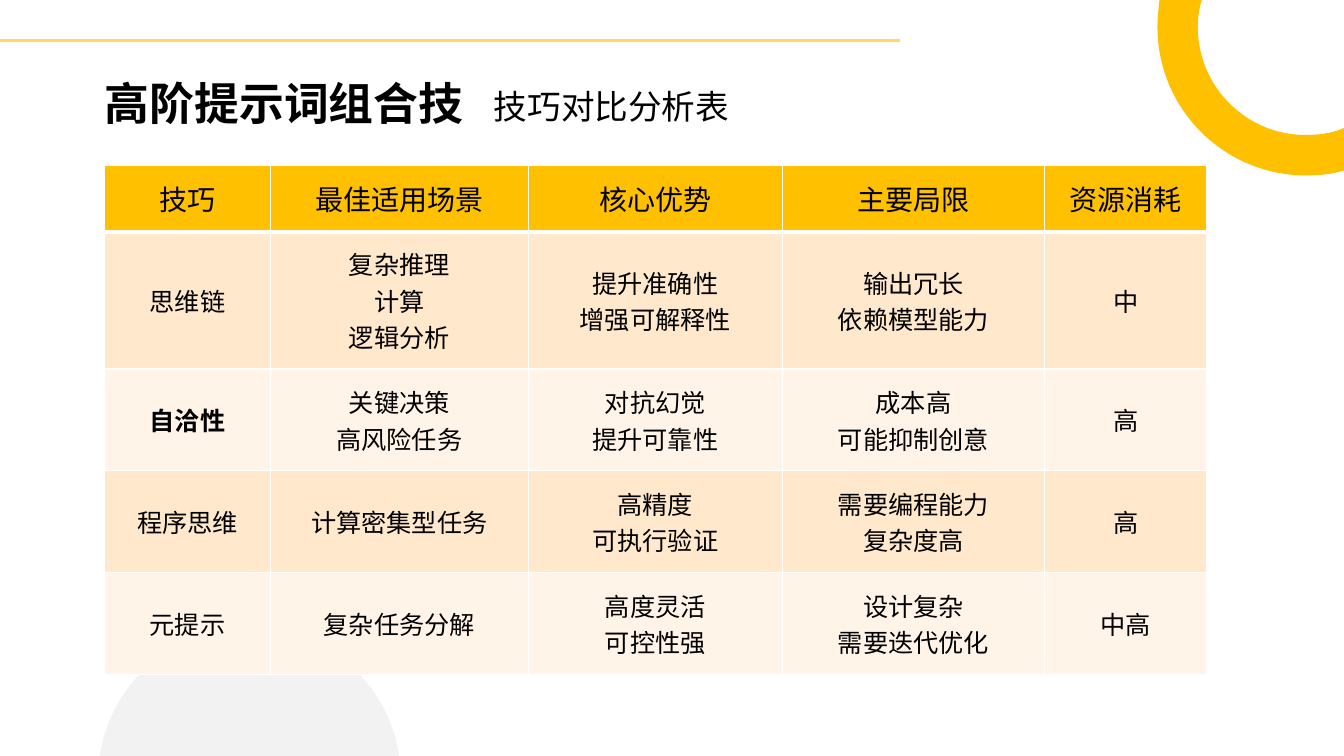
from lxml import etree
from pptx import Presentation
from pptx.dml.color import RGBColor
from pptx.enum.shapes import MSO_CONNECTOR
from pptx.enum.text import MSO_ANCHOR, PP_ALIGN
from pptx.oxml.ns import qn
from pptx.util import Inches, Pt

STRAIGHT = MSO_CONNECTOR.STRAIGHT
MIDDLE = MSO_ANCHOR.MIDDLE
CENTER = PP_ALIGN.CENTER
FONT = "Arial"
BLACK = RGBColor(0x00, 0x00, 0x00)
WHITE = RGBColor(0xFF, 0xFF, 0xFF)
AMBER = RGBColor(0xFF, 0xC0, 0x00)
PALE_AMBER = RGBColor(0xFF, 0xD9, 0x66)
BANDS = RGBColor(0xFF, 0xE8, 0xCC), RGBColor(0xFF, 0xF4, 0xE7)

SLIDE_W, SLIDE_H = 13.33, 7.5
TITLE = "高阶提示词组合技"
SUBTITLE = "技巧对比分析表"
HEADER = ["技巧", "最佳适用场景", "核心优势", "主要局限", "资源消耗"]
TECHNIQUES = [
    ["思维链", "复杂推理\n计算\n逻辑分析", "提升准确性\n增强可解释性", "输出冗长\n依赖模型能力", "中"],
    ["自洽性", "关键决策\n高风险任务", "对抗幻觉\n提升可靠性", "成本高\n可能抑制创意", "高"],
    ["程序思维", "计算密集型任务", "高精度\n可执行验证", "需要编程能力\n复杂度高", "高"],
    ["元提示", "复杂任务分解", "高度灵活\n可控性强", "设计复杂\n需要迭代优化", "中高"],
]
EMPHASIZED = "自洽性"
COLUMN_WIDTHS = [1.64, 2.56, 2.52, 2.6, 1.61]
ROW_HEIGHTS = [0.66, 1.36, 1.01, 1.01, 1.01]
LEFT, TABLE_TOP = 1.04, 1.64
CELL_MARGINS = {"margin_left": 0.18, "margin_right": 0.18,
                "margin_top": 0.08, "margin_bottom": 0.08}

# Each outline is a list of segments: one point is a line, three are a curve.
RING = [
    [(11.92, 0)],
    [(11.89, 0.09), (11.88, 0.18), (11.88, 0.27)],
    [(11.88, 0.86), (12.36, 1.34), (12.95, 1.34)],
    [(13.09, 1.34), (13.22, 1.32), (SLIDE_W, 1.27)],
    [(SLIDE_W, 1.69)],
    [(13.21, 1.73), (13.08, 1.74), (12.95, 1.74)],
    [(12.14, 1.74), (11.48, 1.08), (11.48, 0.27)],
    [(11.48, 0.18), (11.49, 0.09), (11.5, 0)],
]
DISC = [
    [(3.96, SLIDE_H)],
    [(0.99, SLIDE_H)],
    [(1.1, 6.77), (1.72, 6.22), (2.47, 6.22)],
    [(3.23, 6.22), (3.85, 6.77), (3.96, SLIDE_H)],
]


def style(paragraph, size, bold=False):
    for key, value in {"name": FONT, "size": Pt(size), "bold": bold}.items():
        setattr(paragraph.font, key, value)
    paragraph.font.color.rgb = BLACK


def add_outline(slide, segments, color):
    """Draw the segments as one closed shape, turning point triples into curves."""
    points = [(Inches(x), Inches(y)) for segment in segments for x, y in segment]
    builder = slide.shapes.build_freeform(*points[0], scale=1.0)
    builder.add_line_segments(points[1:], close=True)
    shape = builder.convert_to_shape()
    lines = iter(list(shape._element.iter(qn("a:lnTo"))))
    for segment in segments[1:]:
        steps = [next(lines) for _ in segment]
        if len(steps) == 3:
            curve = etree.Element(qn("a:cubicBezTo"))
            steps[0].addprevious(curve)
            for step in steps:
                curve.append(step[0])
                step.getparent().remove(step)
    shape.shadow.inherit = False
    shape.fill.solid()
    shape.fill.fore_color.rgb = color
    shape.line.fill.background()
    return shape


def add_decoration(slide):
    add_outline(slide, RING, AMBER)
    disc = add_outline(slide, DISC, BLACK)
    disc_color = disc._element.spPr.find(qn("a:solidFill"))[0]
    etree.SubElement(disc_color, qn("a:alpha"), val="5000")


def add_rule(slide):
    rule = slide.shapes.add_connector(
        STRAIGHT, 0, Inches(0.4), Inches(8.93), Inches(0.4))
    rule.line.color.rgb = PALE_AMBER
    rule.line.width = Pt(2.25)
    etree.SubElement(rule._element.spPr, qn("a:effectLst"))


def add_heading(slide, text, box, size, bold, margins, spacing=None):
    frame = slide.shapes.add_textbox(*map(Inches, box)).text_frame
    frame.word_wrap = True
    for side, margin in zip(("left", "top", "right", "bottom"), margins):
        setattr(frame, f"margin_{side}", Inches(margin))
    frame.text = text
    frame.paragraphs[0].line_spacing = spacing
    style(frame.paragraphs[0], size, bold)


def set_borders(cell, widths):
    properties = cell._tc.get_or_add_tcPr()
    for side, width in widths.items():
        line = etree.SubElement(properties, qn(f"a:ln{side}"), w=str(Pt(width)))
        fill = etree.SubElement(line, qn("a:solidFill"))
        etree.SubElement(fill, qn("a:srgbClr"), val=str(WHITE))


def add_comparison(slide):
    rows = [HEADER] + TECHNIQUES
    table = slide.shapes.add_table(
        len(rows), len(HEADER), Inches(LEFT), Inches(TABLE_TOP),
        Inches(sum(COLUMN_WIDTHS)), Inches(sum(ROW_HEIGHTS))).table
    for column, width in zip(table.columns, COLUMN_WIDTHS):
        column.width = Inches(width)
    for r, texts in enumerate(rows):
        table.rows[r].height = Inches(ROW_HEIGHTS[r])
        borders = {"L": 1, "R": 1, "T": 3 if r == 1 else 1, "B": 3 if r == 0 else 1}
        for c, text in enumerate(texts):
            cell = table.cell(r, c)
            set_borders(cell, borders)
            cell.fill.solid()
            cell.fill.fore_color.rgb = BANDS[(r - 1) % 2] if r else AMBER
            cell.vertical_anchor = MIDDLE
            for key, margin in CELL_MARGINS.items():
                setattr(cell, key, Inches(margin))
            cell.text_frame.text = text
            for paragraph in cell.text_frame.paragraphs:
                paragraph.alignment = CENTER
                style(paragraph, 18 if r else 20, text == EMPHASIZED)


def main():
    prs = Presentation()
    prs.slide_width, prs.slide_height = Inches(SLIDE_W), Inches(SLIDE_H)
    slide = prs.slides.add_slide(prs.slide_layouts[6])
    add_decoration(slide)
    add_comparison(slide)
    add_rule(slide)
    add_heading(slide, TITLE, (LEFT, 0.69, 3.77, 0.67), 32, True, (0, 0, 0, 0), 1.11)
    add_heading(slide, SUBTITLE, (4.8, 0.8, 3.87, 0.55), 24, False,
                (0.1, 0.05, 0.1, 0.05))
    prs.save("out.pptx")


if __name__ == "__main__":
    main()
